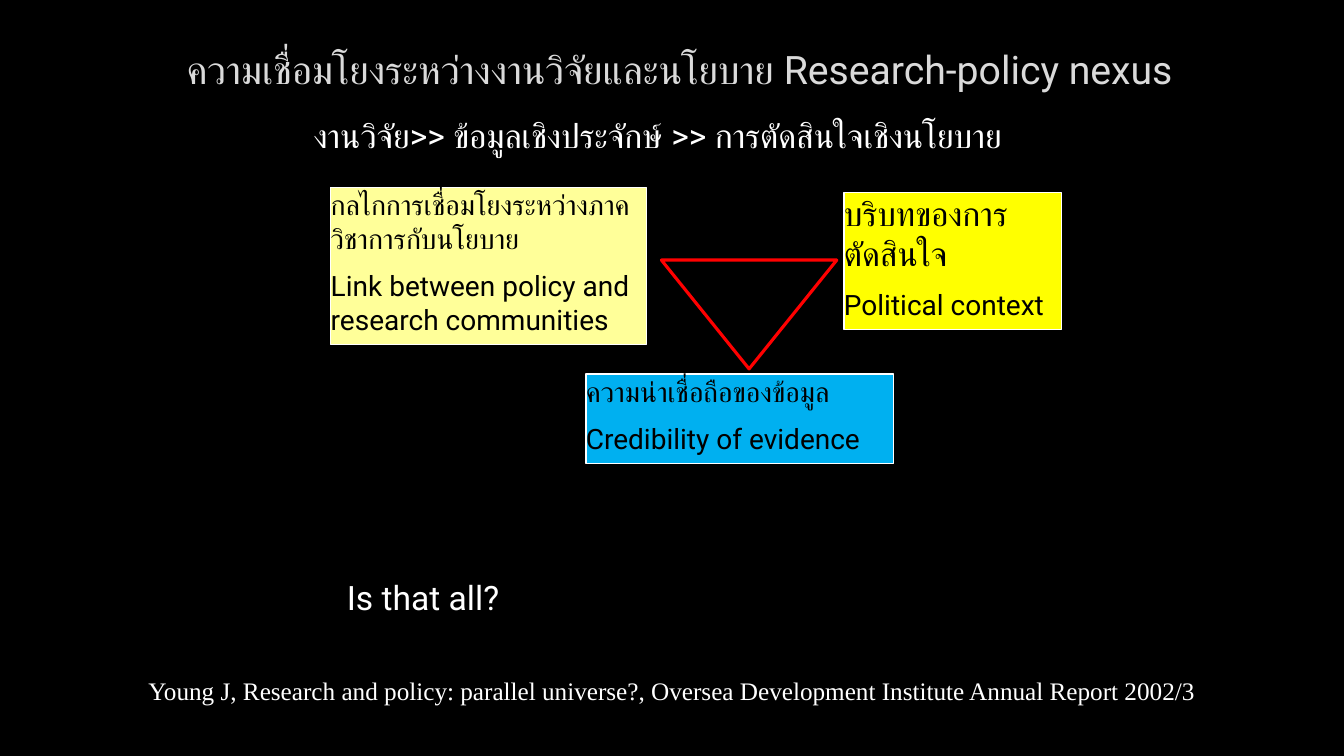
import pptx
import pptx.util
import pptx.dml.color
import pptx.enum.shapes
import pptx.enum.text

RGB = pptx.dml.color.RGBColor
SHAPE = pptx.enum.shapes.MSO_SHAPE
ALIGN = pptx.enum.text.PP_ALIGN
ANCHOR = pptx.enum.text.MSO_ANCHOR
FIT = pptx.enum.text.MSO_AUTO_SIZE

BLACK = RGB(0x00, 0x00, 0x00)
WHITE = RGB(0xFF, 0xFF, 0xFF)
GREY = RGB(0xDA, 0xDA, 0xDA)
RED = RGB(0xFF, 0x00, 0x00)
CREAM = RGB(0xFF, 0xFF, 0x99)
YELLOW = RGB(0xFF, 0xFF, 0x00)
BLUE = RGB(0x00, 0xB0, 0xF0)

WIDE = pptx.util.Inches(13.33)
HIGH = pptx.util.Inches(7.5)


def area(left, top, width, height):
    """Turn percentages of the slide into lengths."""
    return (int(WIDE * left / 100), int(HIGH * top / 100),
            int(WIDE * width / 100), int(HIGH * height / 100))


def write(frame, text, size=24, color=WHITE, font="Roboto",
          align=ALIGN.LEFT, gap=0, first=True):
    para = frame.paragraphs[0] if first else frame.add_paragraph()
    para.alignment = align
    para.space_before = pptx.util.Pt(gap)
    run = para.add_run()
    run.text = text
    run.font.size = pptx.util.Pt(size)
    run.font.name = font
    run.font.color.rgb = color


def fit(frame):
    """Wrap the text and keep it flush with the sides."""
    frame.word_wrap = True
    frame.auto_size = FIT.SHAPE_TO_FIT_TEXT
    frame.vertical_anchor = ANCHOR.TOP
    frame.margin_left = frame.margin_right = frame.margin_top = 0
    frame.margin_bottom = pptx.util.Inches(0.05)


def add_title(slide, text, place):
    title = slide.shapes.title
    title.left, title.top, title.width, title.height = area(*place)
    title.text_frame.vertical_anchor = ANCHOR.MIDDLE
    write(title.text_frame, text, size=28, color=GREY, align=ALIGN.CENTER)


def add_label(slide, text, place, **style):
    frame = slide.shapes.add_textbox(*area(*place)).text_frame
    fit(frame)
    write(frame, text, **style)


def add_box(slide, place, fill, thai, english, size=20):
    box = slide.shapes.add_shape(SHAPE.RECTANGLE, *area(*place))
    box.shadow.inherit = False
    box.fill.solid()
    box.fill.fore_color.rgb = fill
    box.line.color.rgb = WHITE
    box.line.width = pptx.util.Pt(1)
    fit(box.text_frame)
    write(box.text_frame, thai, size=size, color=BLACK)
    write(box.text_frame, english, size=20, color=BLACK, gap=10, first=False)


def add_nexus(slide, place):
    nexus = slide.shapes.add_shape(SHAPE.ISOSCELES_TRIANGLE, *area(*place))
    nexus.rotation = 180
    nexus.shadow.inherit = False
    nexus.fill.background()
    nexus.line.color.rgb = RED
    nexus.line.width = pptx.util.Pt(2.25)


def main():
    deck = pptx.Presentation()
    deck.slide_width, deck.slide_height = WIDE, HIGH
    slide = deck.slides.add_slide(deck.slide_layouts[5])
    slide.background.fill.solid()
    slide.background.fill.fore_color.rgb = BLACK

    # Heading
    add_title(slide, "ความเชื่อมโยงระหว่างงานวิจัยและนโยบาย Research-policy nexus",
              (8.1, 2, 84.92, 14.13))
    add_label(slide, "งานวิจัย>> ข้อมูลเชิงประจักษ์ >> การตัดสินใจเชิงนโยบาย",
              (23.33, 15.2, 60.92, 6))

    # Triangle and its three corners
    add_nexus(slide, (49.21, 34.4, 13.05, 14.4))
    add_box(slide, (24.61, 24.8, 23.48, 20.8), CREAM,
            "กลไกการเชื่อมโยงระหว่างภาควิชาการกับนโยบาย",
            "Link between policy and research communities")
    add_box(slide, (62.79, 25.47, 16.2, 18.13), YELLOW,
            "บริบทของการตัดสินใจ", "Political context", size=24)
    add_box(slide, (43.59, 49.47, 22.88, 11.87), BLUE,
            "ความน่าเชื่อถือของข้อมูล", "Credibility of evidence")

    # Question and source
    add_label(slide, "Is that all?", (25.81, 76.27, 54.31, 6.13))
    add_label(slide, "Young J, Research and policy: parallel universe?, "
              "Oversea Development Institute Annual Report 2002/3",
              (11.03, 89.33, 83.8, 4.67), size=18, font="Times New Roman")

    deck.save("out.pptx")


if __name__ == "__main__":
    main()
